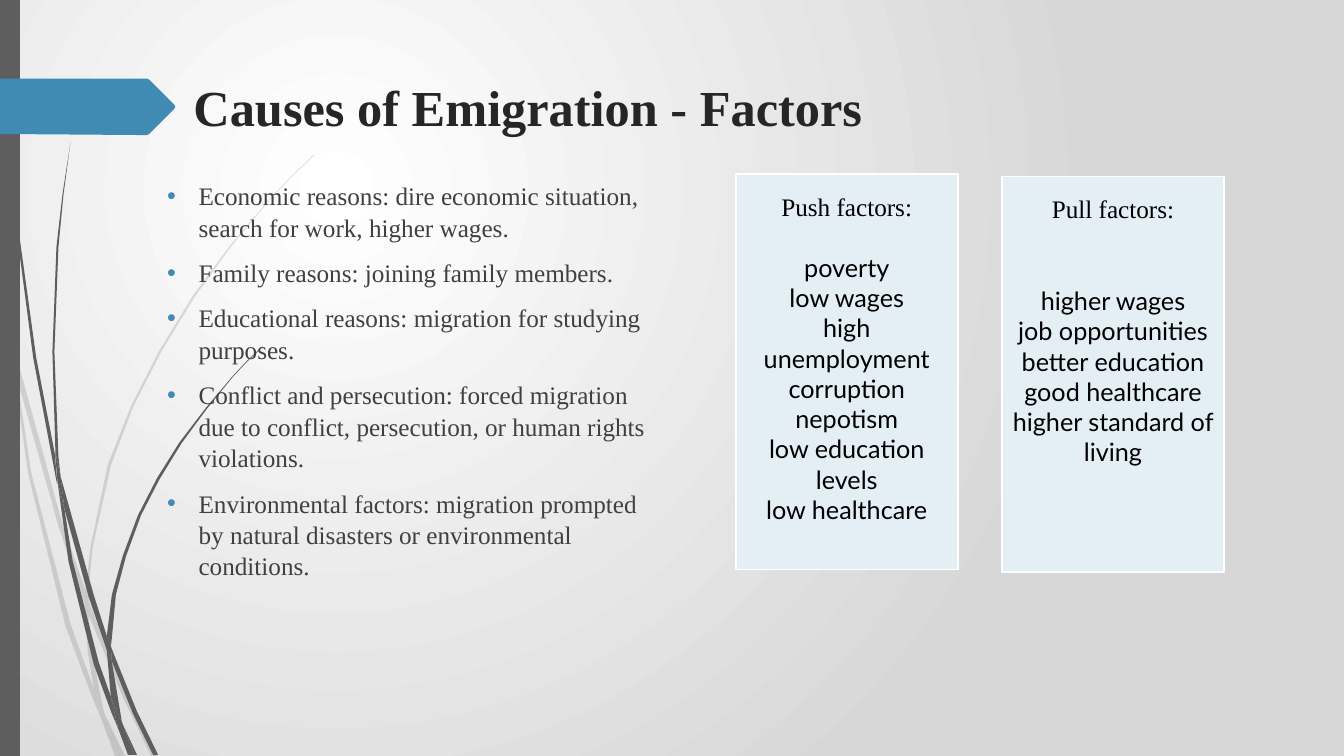
from dataclasses import dataclass

from lxml.etree import SubElement
from pptx import Presentation
from pptx.dml.color import RGBColor
from pptx.enum.shapes import MSO_SHAPE
from pptx.enum.text import MSO_ANCHOR, MSO_AUTO_SIZE, PP_ALIGN
from pptx.oxml.ns import qn
from pptx.shapes.autoshape import Shape
from pptx.slide import Slide
from pptx.text.text import _Paragraph as Paragraph
from pptx.util import Cm, Pt

WHITE = RGBColor(0xFF, 0xFF, 0xFF)
BLACK = RGBColor(0, 0, 0)
BACKDROP_GRAY = RGBColor(0xD7, 0xD7, 0xD7)
DARK_GRAY = RGBColor(0x5E, 0x5E, 0x5E)
TITLE_COLOR = RGBColor(0x26, 0x26, 0x26)
BODY_COLOR = RGBColor(0x40, 0x40, 0x40)
BLUE = RGBColor(0x41, 0x8A, 0xB3)
PALE_BLUE = RGBColor(0xE3, 0xEF, 0xF5)
SERIF = "Times New Roman"
SANS = "Lato"
OUTLINE_UNIT = Cm(2.54) / 100  # outlines use a grid of 1/100 inch

Outline = list[tuple[int, int]]


@dataclass(frozen=True)
class Wisp:
    opacity: int
    outlines: list[Outline]


@dataclass(frozen=True)
class FactorBox:
    heading: str
    factors: list[str]
    left: float
    top: float
    heading_gap: int


PALE_WISP = Wisp(20, [
    [(11, 350), (9, 322), (0, 282), (0, 299), (10, 344)],
    [(58, 522), (84, 599), (85, 586), (62, 520), (14, 345), (17, 376)],
    [(92, 607), (88, 596), (88, 610), (123, 694), (150, 750), (155, 750), (127, 692)],
    [(119, 750), (124, 750), (105, 711)],
    [(93, 683), (70, 619), (31, 469), (17, 376), (11, 350), (28, 470), (65, 621),
     (92, 693), (101, 714), (99, 707)],
    [(84, 599), (87, 646), (93, 683), (96, 692), (105, 711), (103, 706), (91, 646),
     (88, 610), (88, 608)],
    [(88, 584), (92, 543), (110, 462), (132, 404), (160, 349), (193, 295), (229, 245),
     (268, 198), (290, 175), (312, 154), (312, 153), (289, 175), (268, 197),
     (228, 244), (191, 294), (158, 348), (130, 403), (107, 461), (90, 542),
     (85, 584), (85, 586), (88, 596)],
    [(101, 714), (114, 750), (119, 750)],
    [(88, 608), (88, 610), (88, 596), (85, 586), (84, 599)],
    [(96, 692), (93, 683), (99, 707), (101, 714), (119, 750), (105, 711)],
])

DARK_WISP = Wisp(100, [
    [(7, 110), (17, 233), (33, 355), (56, 477), (57, 481), (55, 457), (55, 453),
     (36, 355), (19, 232), (8, 109), (5, 48), (4, 0), (3, 0), (4, 48)],
    [(88, 592), (106, 645), (106, 633), (106, 631), (93, 590), (60, 472), (64, 505)],
    [(113, 649), (110, 641), (111, 656), (132, 708), (152, 749), (157, 749), (136, 706)],
    [(110, 691), (98, 657), (72, 556), (64, 505), (57, 477), (68, 557), (93, 659),
     (111, 708), (117, 722), (116, 717)],
    [(60, 472), (58, 453), (54, 349), (58, 245), (63, 193), (70, 141), (62, 193),
     (56, 245), (52, 349), (55, 449)],
    [(133, 749), (136, 749), (122, 719)],
    [(57, 477), (64, 505), (60, 472), (55, 449), (55, 453)],
    [(111, 633), (115, 590), (125, 552), (140, 511), (158, 476), (180, 440), (205, 406),
     (231, 374), (245, 359), (261, 344), (260, 344), (245, 358), (231, 373),
     (204, 405), (178, 439), (156, 474), (137, 511), (122, 551), (111, 590),
     (106, 631), (110, 641)],
    [(117, 722), (127, 749), (131, 749)],
    [(106, 645), (110, 691), (116, 706), (122, 719), (121, 716), (111, 656), (109, 651)],
    [(106, 645), (109, 651), (111, 656), (110, 641), (106, 631), (106, 633)],
    [(116, 706), (110, 691), (116, 717), (117, 722), (130, 749), (133, 749), (122, 719)],
])

ARROW: Outline = [(173, 108), (148, 133), (146, 134), (136, 134), (0, 133), (0, 78),
                  (146, 78), (148, 79), (173, 104), (174, 106)]

TITLE = "Causes of Emigration - Factors"
REASONS = [
    "Economic reasons: dire economic situation, search for work, higher wages.",
    "Family reasons: joining family members.",
    "Educational reasons: migration for studying purposes.",
    "Conflict and persecution: forced migration due to conflict, persecution, "
    "or human rights violations.",
    "Environmental factors: migration prompted by natural disasters or "
    "environmental conditions.",
]
FACTOR_BOXES = [
    FactorBox("Push factors:",
              ["poverty", "low wages", "high unemployment", "corruption", "nepotism",
               "low education levels", "low healthcare"], 18.54, 4.39, 22),
    FactorBox("Pull factors:",
              ["higher wages", "job opportunities", "better education",
               "good healthcare", "higher standard of living"], 25.25, 4.45, 44),
]


def add_run(paragraph: Paragraph, text: str, font: str, size: int,
            color: RGBColor, bold: bool = False) -> None:
    run = paragraph.add_run()
    run.text = text
    run.font.name = font
    run.font.size = Pt(size)
    run.font.bold = bold
    run.font.color.rgb = color


def place(shape: Shape, left: float, top: float, width: float, height: float) -> None:
    shape.left, shape.top, shape.width, shape.height = map(Cm, (left, top, width, height))


def paint(shape: Shape, color: RGBColor) -> None:
    shape.shadow.inherit = False
    shape.fill.solid()
    shape.fill.fore_color.rgb = color
    shape.line.fill.background()


def draw_outline(shapes, outline: Outline, color: RGBColor, opacity: int = 100) -> None:
    builder = shapes.build_freeform(*outline[0], scale=OUTLINE_UNIT)
    builder.add_line_segments(outline[1:], close=True)
    shape = builder.convert_to_shape()
    paint(shape, color)
    if opacity < 100:
        color_element = next(shape.element.spPr.iter(qn("a:srgbClr")))
        SubElement(color_element, qn("a:alpha"), val=str(opacity * 1000))


def draw_background(slide: Slide) -> None:
    fill = slide.background.fill
    fill.gradient()
    for stop, color in zip(fill.gradient_stops, (WHITE, BACKDROP_GRAY)):
        stop.color.rgb = color
    gradient = next(slide.element.iter(qn("a:gradFill")))
    gradient.remove(gradient.find(qn("a:lin")))
    circle = SubElement(gradient, qn("a:path"), path="circle")
    SubElement(circle, qn("a:fillToRect"), l="50000", t="50000", r="100000", b="100000")


def add_bullet(paragraph: Paragraph) -> None:
    properties = paragraph._p.get_or_add_pPr()
    properties.set("marL", str(Cm(2.06)))
    properties.set("indent", str(Cm(-0.79)))
    bullet_color = SubElement(properties, qn("a:buClr"))
    SubElement(bullet_color, qn("a:srgbClr"), val=str(BLUE))
    SubElement(properties, qn("a:buFont"), typeface="Arial")
    SubElement(properties, qn("a:buChar"), char="•")


def fill_placeholders(slide: Slide) -> None:
    title, body = slide.placeholders
    place(title, 4.62, 1.78, 27.36, 2.36)
    place(body, 2.69, 4.39, 14.25, 12.04)
    for placeholder in (title, body):
        placeholder.text_frame.auto_size = MSO_AUTO_SIZE.NONE
        placeholder.text_frame.vertical_anchor = MSO_ANCHOR.TOP
        # Bring the text in front of the decoration
        placeholder.element.getparent().append(placeholder.element)

    heading = title.text_frame.paragraphs[0]
    heading.alignment = PP_ALIGN.LEFT
    add_run(heading, TITLE, SERIF, 36, TITLE_COLOR, bold=True)

    for index, reason in enumerate(REASONS):
        frame = body.text_frame
        paragraph = frame.add_paragraph() if index else frame.paragraphs[0]
        paragraph.line_spacing = 1.04
        paragraph.space_before = Pt(10)
        add_bullet(paragraph)
        add_run(paragraph, reason, SERIF, 18, BODY_COLOR)


def draw_factor_box(slide: Slide, box: FactorBox) -> None:
    shape = slide.shapes.add_shape(MSO_SHAPE.RECTANGLE, Cm(box.left), Cm(box.top),
                                   Cm(5.6), Cm(9.96))
    paint(shape, PALE_BLUE)
    shape.line.color.rgb = WHITE
    shape.line.width = Pt(1.25)
    frame = shape.text_frame
    frame.word_wrap = True
    frame.vertical_anchor = MSO_ANCHOR.TOP
    frame.margin_top = Cm(0.43)
    heading = frame.paragraphs[0]
    heading.alignment = PP_ALIGN.CENTER
    heading.space_after = Pt(box.heading_gap)
    add_run(heading, box.heading, SERIF, 18, BLACK)
    for factor in box.factors:
        paragraph = frame.add_paragraph()
        paragraph.alignment = PP_ALIGN.CENTER
        add_run(paragraph, factor, SANS, 18, BLACK)


def main() -> None:
    presentation = Presentation()
    presentation.slide_width, presentation.slide_height = Cm(33.87), Cm(19.05)
    slide = presentation.slides.add_slide(presentation.slide_layouts[1])

    # Backdrop and decoration
    draw_background(slide)
    for wisp in (PALE_WISP, DARK_WISP):
        group = slide.shapes.add_group_shape()
        for outline in wisp.outlines:
            draw_outline(group.shapes, outline, DARK_GRAY, wisp.opacity)
    side_bar = slide.shapes.add_shape(MSO_SHAPE.RECTANGLE, 0, 0, Cm(0.5), Cm(19.05))
    paint(side_bar, DARK_GRAY)
    draw_outline(slide.shapes, ARROW, BLUE)

    # Text and factor boxes
    fill_placeholders(slide)
    for box in FACTOR_BOXES:
        draw_factor_box(slide, box)

    presentation.save("out.pptx")


if __name__ == "__main__":
    main()
